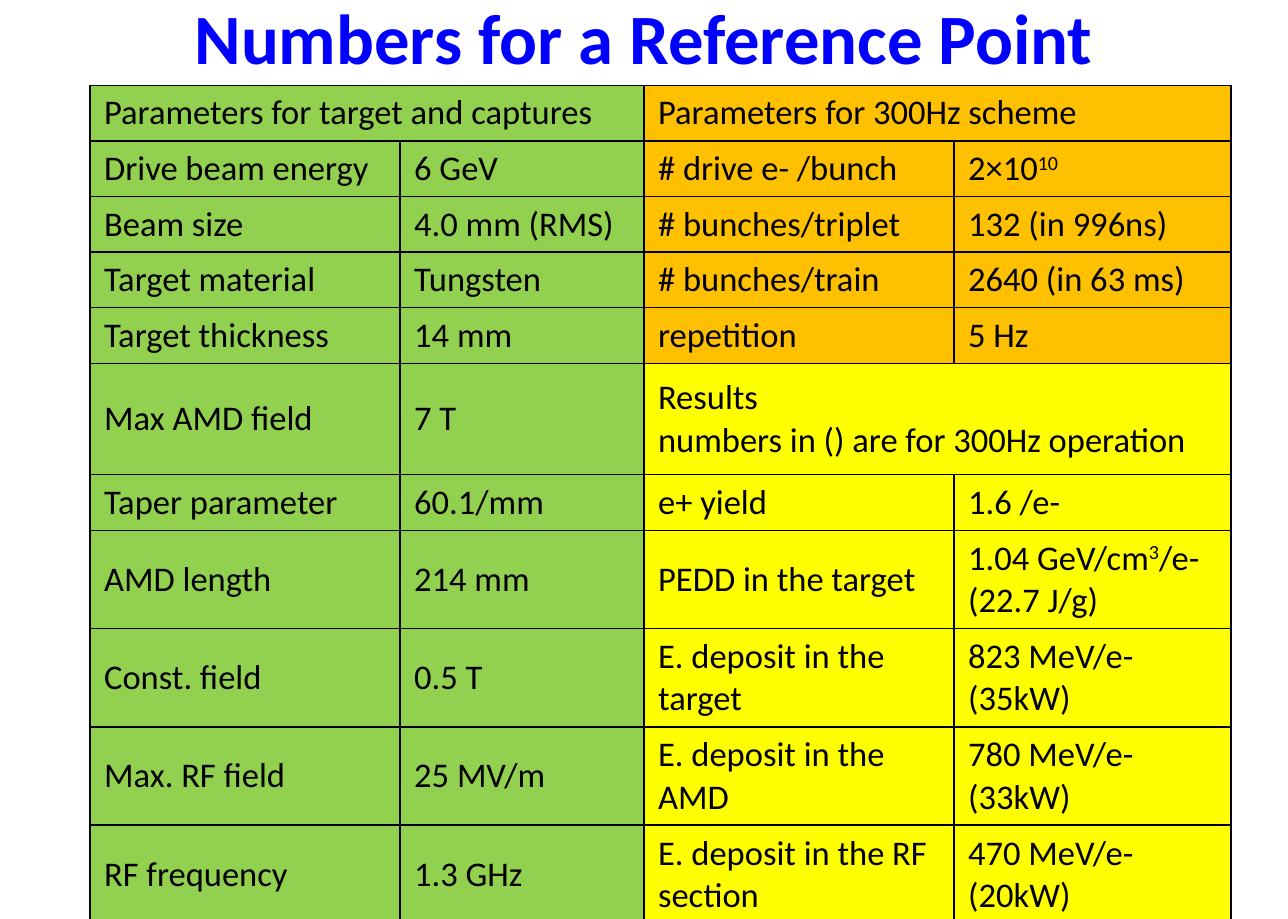
from pptx import Presentation
from pptx.dml.color import RGBColor
from pptx.enum import text
from pptx.oxml import parse_xml
from pptx.oxml.ns import nsdecls
from pptx.util import Inches, Pt

BLUE = RGBColor(0x00, 0x00, 0xFF)
BLACK = RGBColor(0x00, 0x00, 0x00)
GREEN = RGBColor(0x92, 0xD0, 0x50)
ORANGE = RGBColor(0xFF, 0xC0, 0x00)
YELLOW = RGBColor(0xFF, 0xFF, 0x00)
FONT = "Calibri"

WIDTHS = [2.62, 2.06, 2.62, 2.34]
SHORT, MID, TALL = 0.47, 0.83, 0.94
HEIGHTS = [SHORT] * 5 + [TALL, SHORT] + [MID] * 4
RESULTS = 5
MERGES = [(0, 0), (0, 2), (RESULTS, 2)]
ROWS = [
    ("Parameters for target and captures", "", "Parameters for 300Hz scheme", ""),
    ("Drive beam energy", "6 GeV", "# drive e- /bunch", "2×10^10^"),
    ("Beam size", "4.0 mm (RMS)", "# bunches/triplet", "132 (in 996ns)"),
    ("Target material", "Tungsten", "# bunches/train", "2640 (in 63 ms)"),
    ("Target thickness", "14 mm", "repetition", "5 Hz"),
    ("Max AMD field", "7 T", "Results\nnumbers in () are for 300Hz operation", ""),
    ("Taper parameter", "60.1/mm", "e+ yield", "1.6 /e-"),
    ("AMD length", "214 mm", "PEDD in the target", "1.04 GeV/cm^3^/e-\n(22.7 J/g)"),
    ("Const. field", "0.5 T", "E. deposit in the target", "823 MeV/e-\n(35kW)"),
    ("Max. RF field", "25 MV/m", "E. deposit in the AMD", "780 MeV/e-\n(33kW)"),
    ("RF frequency", "1.3 GHz", "E. deposit in the RF section", "470 MeV/e-\n(20kW)"),
]


def add_run(para, words, size, color, bold=False, base=None):
    run = para.add_run()
    run.text = words
    font = run.font
    font.name, font.size, font.bold = FONT, Pt(size), bold
    font.color.rgb = color
    if base:
        run._r.get_or_add_rPr().set("baseline", str(base))


def add_title(slide, words):
    title = slide.shapes.title
    title.left, title.top = Inches(0.13), Inches(-0.23)
    title.width, title.height = Inches(10.61), Inches(1.08)
    frame = title.text_frame
    frame.auto_size = text.MSO_AUTO_SIZE.NONE
    frame.word_wrap = True
    frame.vertical_anchor = text.MSO_ANCHOR.MIDDLE
    para = frame.paragraphs[0]
    para.alignment = text.PP_ALIGN.CENTER
    add_run(para, words, 43, BLUE, bold=True)


def add_edges(cell):
    props = cell._tc.get_or_add_tcPr()
    for side in "LRTB":
        props.append(parse_xml(
            f'<a:ln{side} {nsdecls("a")} w="{Pt(1)}"><a:solidFill>'
            f'<a:srgbClr val="{BLACK}"/></a:solidFill></a:ln{side}>'))


def fill_cell(cell, words, color):
    add_edges(cell)
    cell.fill.solid()
    cell.fill.fore_color.rgb = color
    cell.vertical_anchor = text.MSO_ANCHOR.MIDDLE
    cell.margin_left = cell.margin_right = Inches(0.12)
    cell.margin_top = cell.margin_bottom = Inches(0.05)
    if not words:
        return
    frame = cell.text_frame
    for num, line in enumerate(words.split("\n")):
        para = frame.add_paragraph() if num else frame.paragraphs[0]
        for part, piece in enumerate(line.split("^")):
            if piece:
                add_run(para, piece, 21, BLACK, base=30000 if part % 2 else None)


def pick_color(row, col):
    if col < 2:
        return GREEN
    return ORANGE if row < RESULTS else YELLOW


def add_grid(slide):
    frame = slide.shapes.add_table(
        len(ROWS), len(WIDTHS), Inches(0.76), Inches(0.72),
        Inches(sum(WIDTHS)), Inches(sum(HEIGHTS)))
    table = frame.table
    table.first_row = table.horz_banding = False
    for col, width in zip(table.columns, WIDTHS):
        col.width = Inches(width)
    for row, height in zip(table.rows, HEIGHTS):
        row.height = Inches(height)
    for row, col in MERGES:
        table.cell(row, col).merge(table.cell(row, col + 1))
    for row, line in enumerate(ROWS):
        for col, words in enumerate(line):
            fill_cell(table.cell(row, col), words, pick_color(row, col))


def main():
    deck = Presentation()
    deck.slide_width, deck.slide_height = Inches(10.88), Inches(7.76)
    slide = deck.slides.add_slide(deck.slide_layouts[5])
    add_title(slide, "Numbers for a Reference Point")
    add_grid(slide)
    deck.save("out.pptx")


if __name__ == "__main__":
    main()
